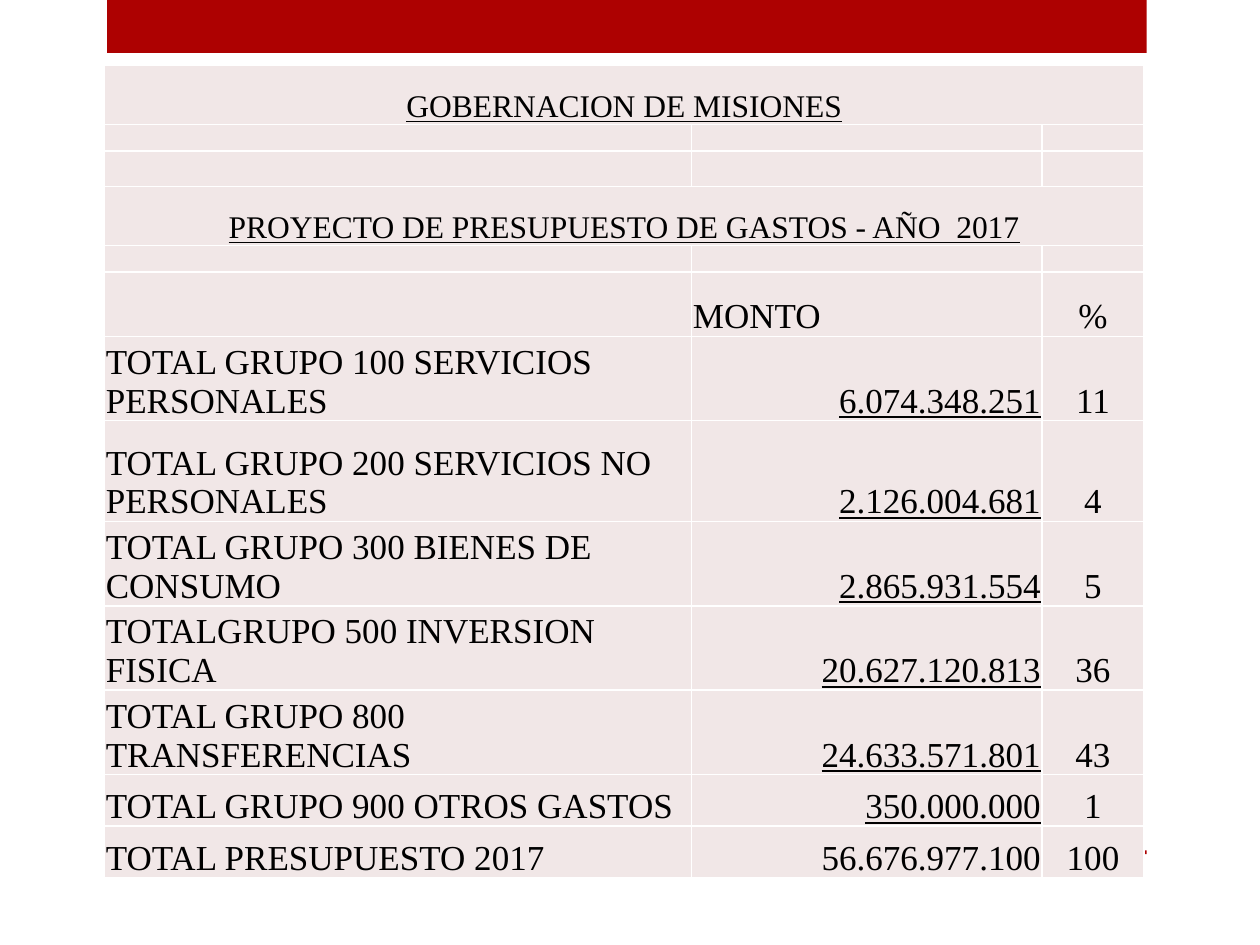
from lxml import etree
from pptx import Presentation
from pptx import util as u
from pptx.dml.color import RGBColor
from pptx.enum import shapes, text
from pptx.oxml.ns import qn

COLORS = {"red": "AD0101", "cell": "F1E7E7", "border": "FFFFFF", "text": "000000"}
FONT = "Times New Roman"
ALIGN = text.PP_ALIGN
COLUMN_ALIGNS = (ALIGN.LEFT, ALIGN.RIGHT, ALIGN.CENTER)

COLUMN_WIDTHS = (4.66, 2.78, 0.81)
ROW_HEIGHTS = (0.47, 0.21, 0.28, 0.47, 0.21, 0.51,
               0.67, 0.8, 0.67, 0.67, 0.67, 0.41, 0.41)
TITLES = {0: "GOBERNACION DE MISIONES",
          3: "PROYECTO DE PRESUPUESTO DE GASTOS - AÑO  2017"}
HEADER_ROW = 5
BUDGET = (
    ("TOTAL GRUPO 100 SERVICIOS PERSONALES", "6.074.348.251", "11"),
    ("TOTAL GRUPO 200 SERVICIOS NO PERSONALES", "2.126.004.681", "4"),
    ("TOTAL GRUPO 300 BIENES DE CONSUMO", "2.865.931.554", "5"),
    ("TOTALGRUPO 500 INVERSION FISICA", "20.627.120.813", "36"),
    ("TOTAL GRUPO 800 TRANSFERENCIAS", "24.633.571.801", "43"),
    ("TOTAL GRUPO 900 OTROS GASTOS", "350.000.000", "1"),
    ("TOTAL PRESUPUESTO 2017", "56.676.977.100", "100"),
)


def rgb(name):
    return RGBColor.from_string(COLORS[name])


def write_text(cell, words, size=20, align=ALIGN.LEFT, underline=False):
    para = cell.text_frame.paragraphs[0]
    para.alignment = align
    span = para.add_run()
    span.text = words
    span.font.name = FONT
    span.font.size = u.Pt(size)
    span.font.underline = underline
    span.font.bold = False
    span.font.color.rgb = rgb("text")


def style_cell(cell):
    cell.margin_left = cell.margin_right = cell.margin_top = u.Inches(0.01)
    cell.margin_bottom = 0
    cell.vertical_anchor = text.MSO_ANCHOR.BOTTOM
    cell.fill.solid()
    cell.fill.fore_color.rgb = rgb("cell")
    # Borders come before the fill in the cell properties
    properties = cell._tc.get_or_add_tcPr()
    for position, side in enumerate(("a:lnL", "a:lnR", "a:lnT", "a:lnB")):
        line = etree.Element(qn(side), w=str(u.Pt(1)))
        solid = etree.SubElement(line, qn("a:solidFill"))
        etree.SubElement(solid, qn("a:srgbClr"), val=COLORS["border"])
        properties.insert(position, line)
    # Small type keeps the empty rows low
    if not cell.text_frame.text:
        para = cell.text_frame.paragraphs[0]
        etree.SubElement(para._p, qn("a:endParaRPr"), sz="800")


def add_bands(page, left, width):
    for top, height in ((0, 0.42), (6.75, 0.03)):
        band = page.shapes.add_shape(
            shapes.MSO_SHAPE.RECTANGLE, u.Inches(left), u.Inches(top),
            u.Inches(width), u.Inches(height))
        band.shadow.inherit = False
        band.fill.solid()
        band.fill.fore_color.rgb = rgb("red")
        band.line.fill.background()


def add_budget_table(page, left, top, width, height):
    table = page.shapes.add_table(
        len(ROW_HEIGHTS), len(COLUMN_WIDTHS), u.Inches(left), u.Inches(top),
        u.Inches(width), u.Inches(height)).table
    table.first_row = table.horz_banding = False
    for column, size in zip(table.columns, COLUMN_WIDTHS):
        column.width = u.Inches(size)
    for row, size in zip(table.rows, ROW_HEIGHTS):
        row.height = u.Inches(size)

    # Titles across the full width
    for row, title in TITLES.items():
        table.cell(row, 0).merge(table.cell(row, 2))
        write_text(table.cell(row, 0), title, size=18,
                   align=ALIGN.CENTER, underline=True)

    # Column headings
    write_text(table.cell(HEADER_ROW, 1), "MONTO")
    write_text(table.cell(HEADER_ROW, 2), "%", align=ALIGN.CENTER)

    # Budget groups; the amount is underlined except in the total
    for row, record in enumerate(BUDGET, HEADER_ROW + 1):
        for column, words in enumerate(record):
            write_text(table.cell(row, column), words,
                       align=COLUMN_ALIGNS[column],
                       underline=column == 1 and record is not BUDGET[-1])

    for cell in table.iter_cells():
        style_cell(cell)


def main():
    deck = Presentation()
    deck.slide_width, deck.slide_height = u.Inches(10), u.Inches(7.5)
    page = deck.slides.add_slide(deck.slide_layouts[6])
    add_bands(page, 0.85, 8.25)
    add_budget_table(page, 0.83, 0.52, sum(COLUMN_WIDTHS), sum(ROW_HEIGHTS))
    deck.save("out.pptx")


if __name__ == "__main__":
    main()
